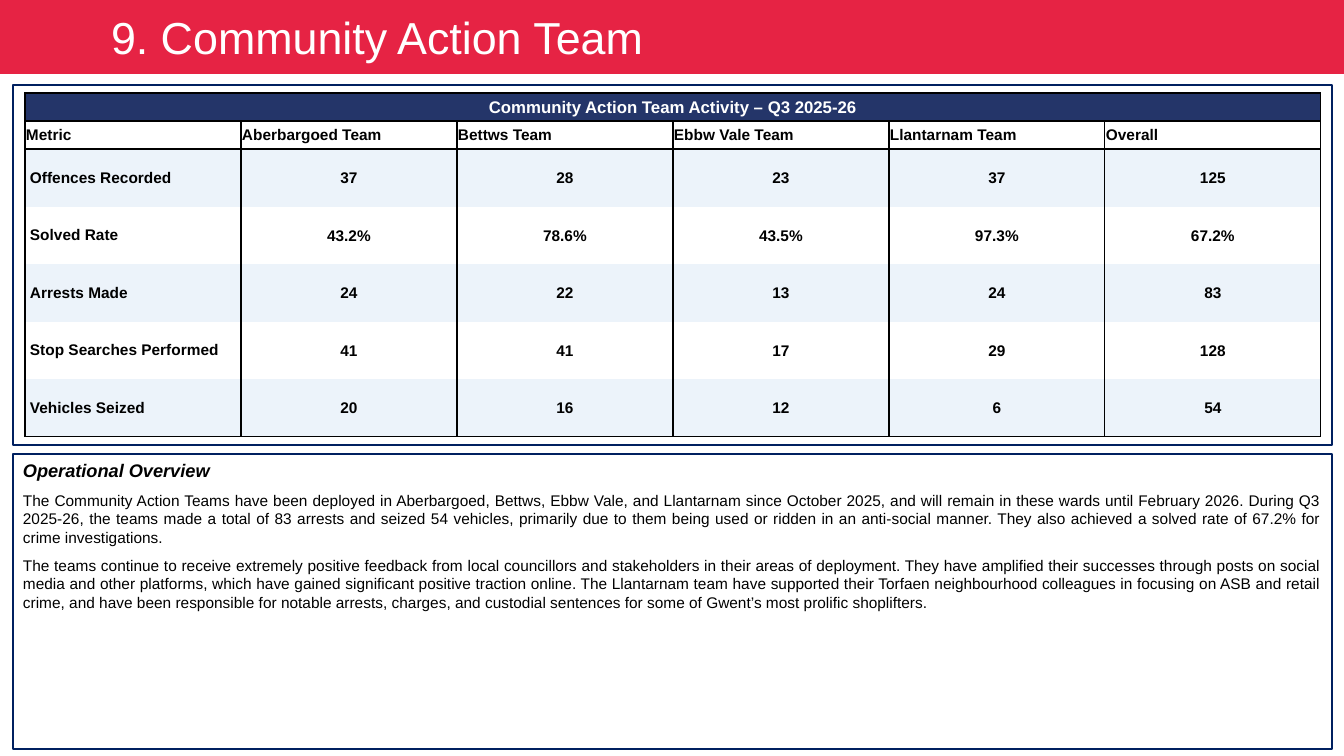
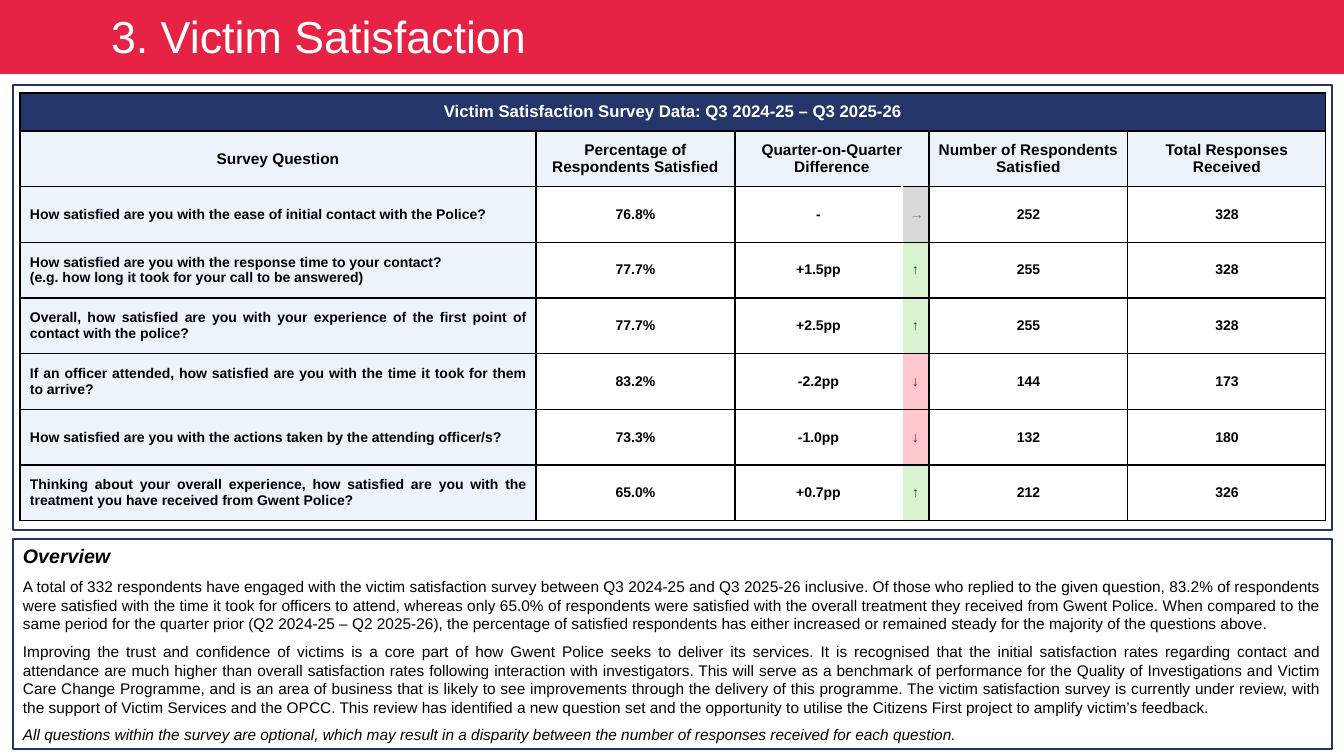
"""Build the two team and survey report slides."""
from pptx import Presentation
from pptx.dml.color import RGBColor
from pptx.enum.shapes import MSO_SHAPE
from pptx.enum.text import MSO_ANCHOR, PP_ALIGN
from pptx.oxml.xmlchemy import OxmlElement
from pptx.util import Pt

PX = 9071
FONT = "Arial"
RED = RGBColor(0xE6, 0x23, 0x44)
NAVY = RGBColor(0x00, 0x20, 0x60)
BLUE = RGBColor(0x24, 0x35, 0x69)
PALE = RGBColor(0xEC, 0xF3, 0xFA)
BLACK = RGBColor(0, 0, 0)
WHITE = RGBColor(0xFF, 0xFF, 0xFF)
TONES = {
    "→": (RGBColor(0x80, 0x80, 0x80), RGBColor(0xD9, 0xD9, 0xD9)),
    "↑": (RGBColor(0x00, 0x61, 0x00), RGBColor(0xD9, 0xF2, 0xD0)),
    "↓": (RGBColor(0x9C, 0x00, 0x06), RGBColor(0xFF, 0xC7, 0xCE)),
}
LEFT, MID, FULL = PP_ALIGN.LEFT, PP_ALIGN.CENTER, PP_ALIGN.JUSTIFY

TEAMS = [
    ["Community Action Team Activity – Q3 2025-26", "", "", "", "", ""],
    ["Metric", "Aberbargoed Team", "Bettws Team", "Ebbw Vale Team", "Llantarnam Team", "Overall"],
    ["Offences Recorded", "37", "28", "23", "37", "125"],
    ["Solved Rate", "43.2%", "78.6%", "43.5%", "97.3%", "67.2%"],
    ["Arrests Made", "24", "22", "13", "24", "83"],
    ["Stop Searches Performed", "41", "41", "17", "29", "128"],
    ["Vehicles Seized", "20", "16", "12", "6", "54"],
]
SURVEY = [
    ["Victim Satisfaction Survey Data: Q3 2024-25 – Q3 2025-26", "", "", "", "", ""],
    ["Survey Question", "Percentage of Respondents Satisfied", "Quarter-on-Quarter Difference", "",
     "Number of Respondents Satisfied", "Total Responses Received"],
    ["How satisfied are you with the ease of initial contact with the Police?",
     "76.8%", "-", "→", "252", "328"],
    ["How satisfied are you with the response time to your contact?\n"
     "(e.g. how long it took for your call to be answered)",
     "77.7%", "+1.5pp", "↑", "255", "328"],
    ["Overall, how satisfied are you with your experience of the first point of contact with the police?",
     "77.7%", "+2.5pp", "↑", "255", "328"],
    ["If an officer attended, how satisfied are you with the time it took for them to arrive?",
     "83.2%", "-2.2pp", "↓", "144", "173"],
    ["How satisfied are you with the actions taken by the attending officer/s?",
     "73.3%", "-1.0pp", "↓", "132", "180"],
    ["Thinking about your overall experience, how satisfied are you with the treatment "
     "you have received from Gwent Police?",
     "65.0%", "+0.7pp", "↑", "212", "326"],
]
TEAM_NOTES = [
    ("Operational Overview", 13, True, True, 0),
    ("The Community Action Teams have been deployed in Aberbargoed, Bettws, Ebbw Vale, and Llantarnam "
     "since October 2025, and will remain in these wards until February 2026. During Q3 2025-26, the teams "
     "made a total of 83 arrests and seized 54 vehicles, primarily due to them being used or ridden in an "
     "anti-social manner. They also achieved a solved rate of 67.2% for crime investigations.",
     11, False, False, 7),
    ("The teams continue to receive extremely positive feedback from local councillors and stakeholders in "
     "their areas of deployment. They have amplified their successes through posts on social media and other "
     "platforms, which have gained significant positive traction online. The Llantarnam team have supported "
     "their Torfaen neighbourhood colleagues in focusing on ASB and retail crime, and have been responsible "
     "for notable arrests, charges, and custodial sentences for some of Gwent’s most prolific shoplifters.",
     11, False, False, 7),
]
SURVEY_NOTES = [
    ("Overview", 14, True, True, 0),
    ("A total of 332 respondents have engaged with the victim satisfaction survey between Q3 2024-25 and "
     "Q3 2025-26 inclusive. Of those who replied to the given question, 83.2% of respondents were satisfied "
     "with the time it took for officers to attend, whereas only 65.0% of respondents were satisfied with the "
     "overall treatment they received from Gwent Police. When compared to the same period for the quarter "
     "prior (Q2 2024-25 – Q2 2025-26), the percentage of satisfied respondents has either increased or "
     "remained steady for the majority of the questions above.", 11, False, False, 7),
    ("Improving the trust and confidence of victims is a core part of how Gwent Police seeks to deliver its "
     "services. It is recognised that the initial satisfaction rates regarding contact and attendance are much "
     "higher than overall satisfaction rates following interaction with investigators. This will serve as a "
     "benchmark of performance for the Quality of Investigations and Victim Care Change Programme, and is an "
     "area of business that is likely to see improvements through the delivery of this programme. The victim "
     "satisfaction survey is currently under review, with the support of Victim Services and the OPCC. This "
     "review has identified a new question set and the opportunity to utilise the Citizens First project to "
     "amplify victim’s feedback.", 11, False, False, 7),
    ("All questions within the survey are optional, which may result in a disparity between the number of "
     "responses received for each question.", 11, False, True, 6),
]
PAGES = [
    ("9. Community Action Team", 5, NAVY, 360, 454, TEAM_NOTES, TEAMS, 25, [216] * 6, 28, [28], 288),
    ("3. Victim Satisfaction", 2, BLUE, 445, 539, SURVEY_NOTES, SURVEY, 20,
     [516, 199, 167, 27, 199, 198], 38, [], 390),
]


def write(par, text, size, color, align, bold=False, slant=False):
    par.alignment = align
    run = par.add_run()
    run.text = text
    font = run.font
    font.name, font.size, font.bold, font.italic = FONT, Pt(size), bold, slant
    font.color.rgb = color


def block(slide, top, tall, left=13, wide=1319, fill=None, line=None):
    shape = slide.shapes.add_shape(MSO_SHAPE.RECTANGLE, left * PX, top * PX, wide * PX, tall * PX)
    shape.shadow.inherit = False
    for part, color in ((shape.fill, fill), (shape.line.fill, line)):
        if color is None:
            part.background()
        else:
            part.solid()
            part.fore_color.rgb = color
    if line is not None:
        shape.line.width = Pt(1.25)
    shape.text_frame.word_wrap = True
    return shape


deck = Presentation()
deck.slide_width, deck.slide_height = 1344 * PX, 756 * PX

for title, inset, edge, tall, low, notes, data, left, cols, head, sub, body in PAGES:
    slide = deck.slides.add_slide(deck.slide_layouts[6])
    block(slide, 85, tall, line=edge)

    band = block(slide, 0, 74, 0, 1344, fill=RED).text_frame
    band.vertical_anchor = MSO_ANCHOR.MIDDLE
    band.margin_left, band.margin_top, band.margin_bottom = 111 * PX, inset * PX, 5 * PX
    write(band.paragraphs[0], title, 32, WHITE, LEFT)

    frame = block(slide, low, 749 - low, line=edge).text_frame
    frame.vertical_anchor = MSO_ANCHOR.TOP
    for i, (text, size, bold, slant, gap) in enumerate(notes):
        par = frame.add_paragraph() if i else frame.paragraphs[0]
        if gap:
            par.space_before = Pt(gap)
        write(par, text, size, BLACK, FULL, bold, slant)

    survey = data is SURVEY
    rest = len(data) - 1 - len(sub)
    rows = [head * PX] + [n * PX for n in sub] + [body * PX // rest] * rest
    table = slide.shapes.add_table(len(data), 6, left * PX, 93 * PX, sum(cols) * PX, sum(rows)).table
    table.first_row = table.horz_banding = False
    for col, wide in zip(table.columns, cols):
        col.width = wide * PX
    for row, high in zip(table.rows, rows):
        row.height = high
    table.cell(0, 0).merge(table.cell(0, 5))
    if survey:
        table.cell(1, 2).merge(table.cell(1, 3))

    for r, line in enumerate(data):
        for c, text in enumerate(line):
            cell = table.cell(r, c)
            sides = dict.fromkeys("LRTB", BLACK)
            if survey and r > 1 and c in (2, 3):
                sides["R" if c == 2 else "L"] = WHITE
            if not survey and r > 1:
                sides["T"] = BLACK if r == 2 else None
                sides["B"] = BLACK if r == len(data) - 1 else None
            for side, color in sides.items():
                rule = OxmlElement(f"a:ln{side}")
                rule.set("w", str(Pt(1)))
                paint = OxmlElement("a:noFill" if color is None else "a:solidFill")
                if color is not None:
                    tint = OxmlElement("a:srgbClr")
                    tint.set("val", str(color))
                    paint.append(tint)
                rule.append(paint)
                cell._tc.get_or_add_tcPr().append(rule)

            ink, fill = TONES.get(text, (BLACK, None))
            if r == 0:
                ink, fill = WHITE, BLUE
            elif survey and (r == 1 or c == 0) or not survey and r % 2 == 0:
                fill = PALE
            if fill is None:
                cell.fill.background()
            else:
                cell.fill.solid()
                cell.fill.fore_color.rgb = fill
            if cell.is_spanned:
                continue

            align, size = MID, 12 if r == 0 else 11
            if survey:
                side = 4 if r == 1 and c else 8 if c == 3 else 10
                pads = side, 8, side, 8
                if r > 1:
                    size = 10
                    align = MID if c else FULL
            else:
                pads = (5, 5, 5, 5) if r > 1 and c == 0 else (1, 1, 1, 0)
                if r == 1 or r > 1 and c == 0:
                    align = LEFT
            cell.margin_left, cell.margin_top, cell.margin_right, cell.margin_bottom = [n * PX for n in pads]
            cell.vertical_anchor = MSO_ANCHOR.MIDDLE
            for i, part in enumerate(text.split("\n")):
                par = cell.text_frame.add_paragraph() if i else cell.text_frame.paragraphs[0]
                write(par, part, size, ink, align, True)

deck.save("out.pptx")
